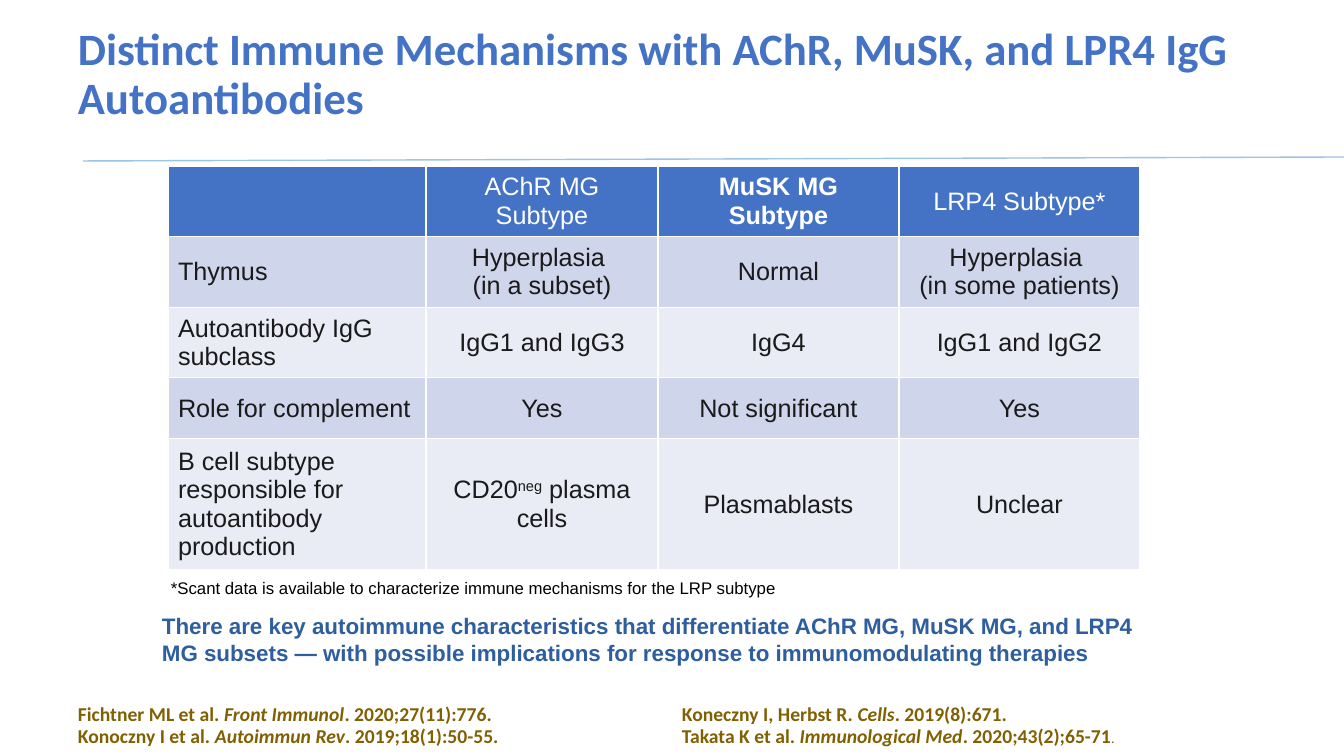
from lxml.etree import SubElement
from pptx import Presentation
from pptx.dml.color import RGBColor
from pptx.enum.shapes import MSO_CONNECTOR
from pptx.enum.text import MSO_ANCHOR, PP_ALIGN
from pptx.oxml import parse_xml
from pptx.oxml.ns import nsdecls, qn
from pptx.util import Emu, Pt

BLUE, WHITE, INK = "4472C4", "FFFFFF", "1A1A1A"
BANDS = "CFD5EA", "E9EBF5"
GOLD, GREY = "806000", "5A5A5A"


def px(length):
    return Emu(round(length * 914400 / 100.8))


def rgb(value):
    return RGBColor.from_string(value)


class SlideBuilder:
    """Draws styled elements on the current slide, measured in px."""

    def __init__(self, slide, border=WHITE):
        self.slide = slide
        self.border = border

    def runs(self, paragraph, parts, font, size, color, bold=False):
        for part in parts:
            words, style = part if isinstance(part, tuple) else (part, {})
            run = paragraph.add_run()
            run.text = words
            run.font.name = font
            run.font.size = Pt(style.get("size", size))
            run.font.bold = style.get("bold", bold)
            run.font.italic = style.get("italic", False)
            run.font.color.rgb = rgb(style.get("color", color))
            if "baseline" in style:
                run.font._rPr.set("baseline", str(style["baseline"]))

    def paragraphs(self, frame, lines, align=PP_ALIGN.LEFT, spacing=None, tab=None, **style):
        for index, parts in enumerate(lines):
            paragraph = frame.add_paragraph() if index else frame.paragraphs[0]
            paragraph.alignment = align
            if spacing:
                paragraph.line_spacing = spacing
            if tab:
                stops = SubElement(paragraph._p.get_or_add_pPr(), qn("a:tabLst"))
                SubElement(stops, qn("a:tab"), pos=str(px(tab)), algn="l")
            self.runs(paragraph, parts, **style)

    def text(self, left, top, width, height, lines, **style):
        box = self.slide.shapes.add_textbox(px(left), px(top), px(width), px(height))
        box.text_frame.word_wrap = True
        self.paragraphs(box.text_frame, lines, **style)

    def line(self, x1, y1, x2, y2, color, weight):
        rule = self.slide.shapes.add_connector(
            MSO_CONNECTOR.STRAIGHT, px(x1), px(y1), px(x2), px(y2))
        rule.line.color.rgb = rgb(color)
        rule.line.width = Pt(weight)
        SubElement(rule._element.spPr, qn("a:effectLst"))

    def cell(self, cell, lines, fill, **style):
        cell.fill.solid()
        cell.fill.fore_color.rgb = rgb(fill)
        cell.vertical_anchor = MSO_ANCHOR.MIDDLE
        for index, side in enumerate("LRTB"):
            cell._tc.get_or_add_tcPr().insert(index, parse_xml(
                f'<a:ln{side} {nsdecls("a")} w="12700"><a:solidFill>'
                f'<a:srgbClr val="{self.border}"/></a:solidFill></a:ln{side}>'))
        self.paragraphs(cell.text_frame, lines, **style)

    def table(self, left, top, widths, heights, rows, font, size):
        grid = self.slide.shapes.add_table(
            len(rows), len(widths), px(left), px(top),
            px(sum(widths)), px(sum(heights))).table
        for column, width in zip(grid.columns, widths):
            column.width = px(width)
        for r, (row, height) in enumerate(zip(rows, heights)):
            grid.rows[r].height = px(height)
            for c, lines in enumerate(row):
                self.cell(
                    grid.cell(r, c), lines, BANDS[(r - 1) % 2] if r else BLUE,
                    align=PP_ALIGN.CENTER if c or not r else PP_ALIGN.LEFT,
                    font=font, size=size, color=INK if r else WHITE)


def main():
    deck = Presentation()
    deck.slide_width, deck.slide_height = px(1344), px(756)
    builder = SlideBuilder(deck.slides.add_slide(deck.slide_layouts[6]))
    italic = {"italic": True}

    builder.line(83, 161, 1344, 157, "9DC3E6", 1)
    builder.text(
        68, 22, 1210, 126,
        [["Distinct Immune Mechanisms with AChR, MuSK, and LPR4 IgG Autoantibodies"]],
        spacing=0.9, font="Calibri", size=32, color=BLUE, bold=True)

    mechanisms = [
        [[], [["AChR MG Subtype"]], [[("MuSK MG Subtype", {"bold": True})]],
         [["LRP4 Subtype*"]]],
        [[["Thymus"]], [["Hyperplasia "], ["(in a subset)"]], [["Normal"]],
         [["Hyperplasia "], ["(in some patients)"]]],
        [[["Autoantibody IgG subclass"]], [["IgG1 and IgG3"]], [["IgG4"]],
         [["IgG1 and IgG2"]]],
        [[["Role for complement"]], [["Yes"]], [["Not significant"]], [["Yes"]]],
        [[["B cell subtype responsible for autoantibody production"]],
         [["CD20", ("neg", {"baseline": 30000}), " plasma cells"]],
         [["Plasmablasts"]], [["Unclear"]]],
    ]
    builder.table(168, 166, [258, 232, 241, 241], [66, 67, 68, 61, 123],
                  mechanisms, font="Arial", size=18)

    builder.text(
        161, 573, 728, 30,
        [["*Scant data is available to characterize immune mechanisms for the LRP subtype"]],
        font="Arial", size=12, color="000000")
    builder.text(
        152, 607, 1004, 64,
        [["There are key autoimmune characteristics that differentiate AChR MG, MuSK MG, and LRP4"],
         ["MG subsets — with possible implications for response to immunomodulating therapies"]],
        font="Arial", size=16, color="2E5E9E", bold=True)

    references = [
        ["Fichtner ML et al. ", ("Front Immunol", italic),
         ". 2020;27(11):776.\tKoneczny I, Herbst R. ", ("Cells", italic), ". 2019(8):671."],
        ["Konoczny I et al. ", ("Autoimmun Rev", italic),
         ". 2019;18(1):50-55.\tTakata K et al. ", ("Immunological Med", italic),
         ". 2020;43(2);65-71", (".", {"size": 10, "color": GREY, "bold": False})],
    ]
    builder.text(68, 700, 1190, 44, references, spacing=0.9, tab=604,
                 font="Calibri", size=14, color=GOLD, bold=True)

    deck.save("out.pptx")


if __name__ == "__main__":
    main()
